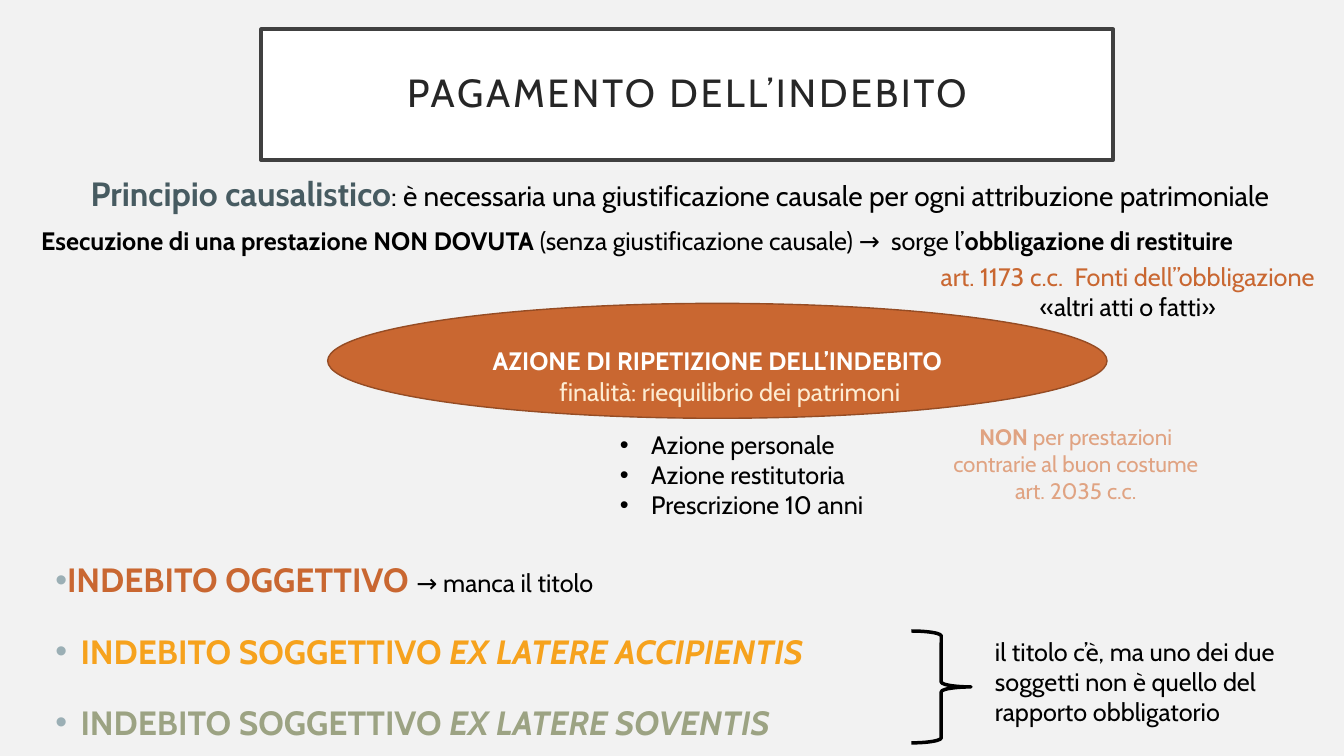
from lxml.etree import SubElement
from pptx import Presentation
from pptx.dml.color import RGBColor
from pptx.enum.shapes import MSO_SHAPE as Shape
from pptx.enum.text import MSO_ANCHOR as Anchor, MSO_AUTO_SIZE as AutoSize, PP_ALIGN as Align
from pptx.oxml.ns import qn
from pptx.util import Inches, Pt

FONT = "Cabin"
BACKGROUND = RGBColor(0xF2, 0xF2, 0xF2)
WHITE = RGBColor(0xFF, 0xFF, 0xFF)
BLACK = RGBColor(0, 0, 0)
TITLE_TEXT = RGBColor(0x26, 0x26, 0x26)
TITLE_LINE = RGBColor(0x40, 0x40, 0x40)
SLATE = RGBColor(0x47, 0x5B, 0x61)
ORANGE = RGBColor(0xC9, 0x67, 0x31)
DARK_ORANGE = RGBColor(0x95, 0x4C, 0x24)
PALE_ORANGE = RGBColor(0xE0, 0xA3, 0x82)
CREAM = RGBColor(0xFD, 0xEC, 0xD2)
AMBER = RGBColor(0xF6, 0xA2, 0x1D)
SAGE = RGBColor(0x9C, 0xA3, 0x83)
BULLET_GREY = RGBColor(0x9B, 0xAF, 0xB5)


def add_runs(paragraph, *runs):
    """Each run is (text, size, colour, style); style may hold b and i."""
    for text, size, color, style in runs:
        run = paragraph.add_run()
        run.text = text
        font = run.font
        font.name, font.size = FONT, Pt(size)
        font.color.rgb = color
        font.bold, font.italic = "b" in style, "i" in style


def add_bullet(paragraph, margin, hanging, color):
    properties = paragraph._p.get_or_add_pPr()
    properties.set("marL", str(Inches(margin)))
    properties.set("indent", str(-Inches(hanging)))
    bullet_color = SubElement(properties, qn("a:buClr"))
    SubElement(bullet_color, qn("a:srgbClr"), val=str(color))
    SubElement(properties, qn("a:buFont"), typeface="Arial")
    SubElement(properties, qn("a:buChar"), char="•")


def add_text(slide, box, lines, align=Align.LEFT, grow=True):
    """Place a text box with one paragraph per list of runs."""
    text_frame = slide.shapes.add_textbox(*map(Inches, box)).text_frame
    text_frame.word_wrap = True
    text_frame.auto_size = AutoSize.SHAPE_TO_FIT_TEXT if grow else AutoSize.NONE
    for index, runs in enumerate(lines):
        paragraph = text_frame.add_paragraph() if index else text_frame.paragraphs[0]
        paragraph.alignment = align
        add_runs(paragraph, *runs)
    return text_frame


def add_outlined(slide, kind, box, fill, line, width):
    shape = slide.shapes.add_shape(kind, *map(Inches, box))
    shape.shadow.inherit = False
    if fill is None:
        shape.fill.background()
    else:
        shape.fill.solid()
        shape.fill.fore_color.rgb = fill
    shape.line.color.rgb = line
    shape.line.width = Pt(width)
    return shape


def add_title(slide, box):
    shape = add_outlined(slide, Shape.RECTANGLE, box, WHITE, TITLE_LINE, 2.5)
    text_frame = shape.text_frame
    text_frame.word_wrap = True
    text_frame.vertical_anchor = Anchor.MIDDLE
    paragraph = text_frame.paragraphs[0]
    paragraph.alignment = Align.CENTER
    paragraph.line_spacing = 0.9
    add_runs(paragraph, ("PAGAMENTO DELL’INDEBITO", 28, TITLE_TEXT, ""))
    paragraph.runs[0]._r.get_or_add_rPr().set("spc", "200")


def add_principle(slide, box):
    left, top, width = box
    # Principle, its consequence and the legal source
    add_text(slide, (left + 0.49, top, width - 0.67, 0.5), [[
        ("Principio causalistico", 24, SLATE, "b"),
        (": è necessaria una giustificazione causale per ogni attribuzione patrimoniale",
         20, BLACK, "")]])
    add_text(slide, (left, top + 0.52, width, 0.4), [[
        ("Esecuzione di una prestazione NON DOVUTA ", 18, BLACK, "b"),
        ("(senza giustificazione causale) →  sorge l’", 18, BLACK, ""),
        ("obbligazione di restituire", 18, BLACK, "b")]])
    add_text(slide, (left + 8.73, top + 0.87, 4.29, 0.71), [
        [("art. 1173 c.c.  Fonti dell’’obbligazione", 18, ORANGE, "")],
        [("«altri atti o fatti»", 18, BLACK, "")]], Align.CENTER)


def add_action(slide, box):
    left, top, width, height = box
    # Ellipse with its name and purpose
    ellipse = add_outlined(slide, Shape.OVAL, box, ORANGE, DARK_ORANGE, 1)
    ellipse.text_frame.vertical_anchor = Anchor.MIDDLE
    paragraph = ellipse.text_frame.paragraphs[0]
    paragraph.alignment = Align.CENTER
    add_runs(paragraph, ("AZIONE DI RIPETIZIONE DELL’INDEBITO", 18, WHITE, "b"))
    add_text(slide, (left + 2.2, top + 0.67, 4.31, 0.71),
             [[("finalità: riequilibrio dei patrimoni", 18, CREAM, "")]])

    # Features of the action
    features = ["Azione personale", "Azione restitutoria", "Prescrizione 10 anni"]
    text_frame = add_text(slide, (left + 2.8, top + 1.2, 4.22, 1.01),
                          [[(feature, 18, BLACK, "")] for feature in features])
    for paragraph in text_frame.paragraphs:
        add_bullet(paragraph, 0.31, 0.31, BLACK)

    # Exception
    add_text(slide, (left + 6.09, top + height, 2.66, 0.91), [
        [("NON", 16, PALE_ORANGE, "b"),
         (" per prestazioni contrarie al buon costume", 16, PALE_ORANGE, "")],
        [("art. 2035 c.c.", 16, PALE_ORANGE, "")]], Align.CENTER)


def add_kinds(slide, box):
    left, top, width, height = box
    # Kinds of undue payment
    text_frame = add_text(slide, (left, top, 8.45, height), [
        [("INDEBITO OGGETTIVO ", 24, ORANGE, "b"), ("→ manca il titolo", 18, BLACK, "")],
        [("INDEBITO SOGGETTIVO ", 24, AMBER, "b"), ("EX LATERE ACCIPIENTIS", 24, AMBER, "bi")],
        [("INDEBITO SOGGETTIVO ", 24, SAGE, "b"), ("EX LATERE SOVENTIS", 24, SAGE, "bi")],
    ], grow=False)
    for index, paragraph in enumerate(text_frame.paragraphs):
        add_bullet(paragraph, 0.25 if index else 0, 0.25, BULLET_GREY)
        paragraph.space_before = Pt(10 if index else 0)
        paragraph.space_after = Pt(12)

    # Brace and remark on the two subjective kinds
    add_outlined(slide, Shape.RIGHT_BRACE, (left + 8.59, top + 0.76, 0.59, 1.11),
                 None, BLACK, 2.5)
    add_text(slide, (left + width - 3.28, top + 0.76, 3.28, 1.01), [[
        ("il titolo c’è, ma uno dei due soggetti non è quello del rapporto obbligatorio",
         18, BLACK, "")]])


def main():
    presentation = Presentation()
    presentation.slide_width, presentation.slide_height = Inches(13.33), Inches(7.5)
    slide = presentation.slides.add_slide(presentation.slide_layouts[6])
    slide.background.fill.solid()
    slide.background.fill.fore_color.rgb = BACKGROUND
    add_title(slide, (2.59, 0.29, 8.45, 1.3))
    add_principle(slide, (0.31, 1.67, 13.29))
    add_action(slide, (3.25, 3.01, 7.73, 1.14))
    add_kinds(slide, (0.45, 5.5, 12.6, 2))
    presentation.save("out.pptx")


if __name__ == "__main__":
    main()
